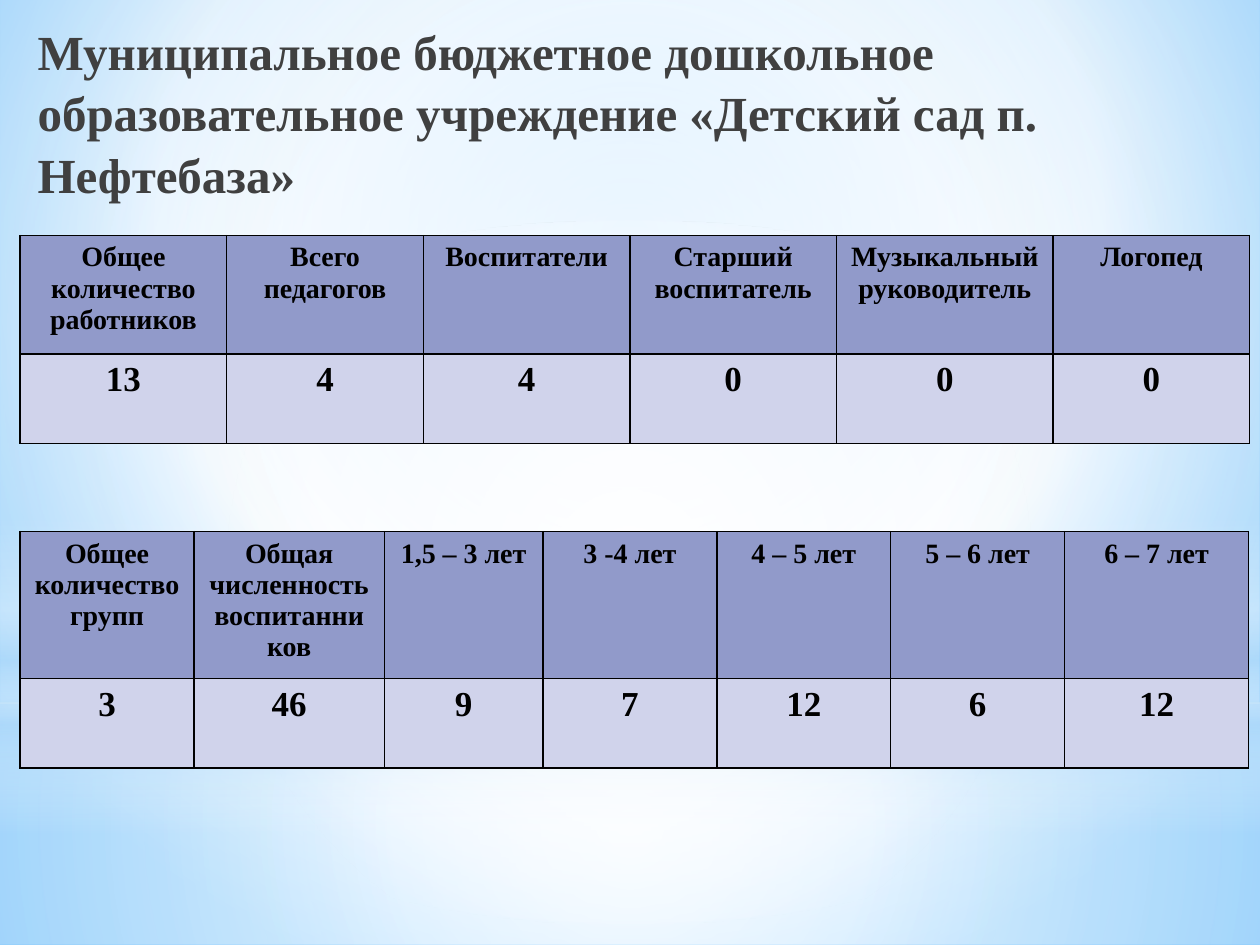
from dataclasses import dataclass

from pptx import Presentation
from pptx.dml.color import RGBColor
from pptx.enum.shapes import MSO_SHAPE as Shp
from pptx.enum.text import MSO_ANCHOR, PP_ALIGN
from pptx.oxml import parse_xml
from pptx.oxml.ns import nsdecls, qn
from pptx.util import Inches, Pt

BLACK = RGBColor(0x00, 0x00, 0x00)
TITLE_GREY = RGBColor(0x40, 0x40, 0x40)
HEADER_FILL = RGBColor(0x91, 0x9A, 0xCA)
VALUE_FILL = RGBColor(0xD0, 0xD3, 0xEB)
WHITE = RGBColor(0xFF, 0xFF, 0xFF)
PALE_BLUE = RGBColor(0xB4, 0xDC, 0xFA)
SKY = RGBColor(0x9E, 0xD5, 0xFF)
DEEP_SKY = RGBColor(0x5B, 0xB9, 0xFF)
FONT = "Times New Roman"
CENTRE = (50, 50, 50, 50)


@dataclass
class Gradient:
    stops: list  # (position %, colour, opacity %)
    focus: tuple | None = None  # left, top, right, bottom in %; None is vertical


@dataclass
class Glow:
    shape: Shp
    top: float
    height: float
    gradient: Gradient


@dataclass
class StaffTable:
    top: float
    widths: list
    heights: list
    header: list
    values: list


BACKGROUND = Gradient([(0, SKY, 100), (60, WHITE, 100), (100, DEEP_SKY, 100)],
                      (20, 10, 20, 60))
GLOWS = [
    Glow(Shp.RECTANGLE, 5.58, 1.92, Gradient(
        [(0, WHITE, 91), (37, WHITE, 76), (100, PALE_BLUE, 79)], CENTRE)),
    Glow(Shp.RECTANGLE, 0, 5.58, Gradient(
        [(0, WHITE, 89), (48, WHITE, 62), (100, PALE_BLUE, 79)], CENTRE)),
    Glow(Shp.RECTANGLE, 4.12, 2.5, Gradient(
        [(0, WHITE, 0), (29, WHITE, 30), (45, PALE_BLUE, 40),
         (55, WHITE, 26), (65, PALE_BLUE, 60), (100, WHITE, 0)])),
    Glow(Shp.OVAL, 1.75, 5.58, Gradient(
        [(0, WHITE, 100), (56, WHITE, 0)], CENTRE)),
]
TABLES = [
    StaffTable(1.87, [1.64, 1.56, 1.64, 1.64, 1.72, 1.56], [0.94, 0.71],
               ["Общее количество работников", "Всего педагогов", "Воспитатели",
                "Старший воспитатель", "Музыкальный руководитель", "Логопед"],
               ["13", "4", "4", "0", "0", "0"]),
    StaffTable(4.22, [1.38, 1.51, 1.26, 1.38, 1.38, 1.38, 1.46], [1.09, 0.71],
               ["Общее количество групп", "Общая численность воспитанников",
                "1,5 – 3 лет", "3 -4 лет", "4 – 5 лет", "5 – 6 лет", "6 – 7 лет"],
               ["3", "46", "9", "7", "12", "6", "12"]),
]


def set_gradient(fill, element, gradient: Gradient) -> None:
    """Swap a solid fill inside the element for the gradient."""
    fill.solid()
    solid = next(element.iter(qn("a:solidFill")))
    stops = "".join(
        f'<a:gs pos="{pos * 1000}"><a:srgbClr val="{colour}">'
        f'<a:alpha val="{opacity * 1000}"/></a:srgbClr></a:gs>'
        for pos, colour, opacity in gradient.stops)
    if gradient.focus:
        sides = " ".join(f'{side}="{v * 1000}"'
                         for side, v in zip("ltrb", gradient.focus))
        kind = f'<a:path path="circle"><a:fillToRect {sides}/></a:path>'
    else:
        kind = '<a:lin ang="5400000" scaled="0"/>'
    solid.getparent().replace(solid, parse_xml(
        f'<a:gradFill {nsdecls("a")} rotWithShape="1">'
        f'<a:gsLst>{stops}</a:gsLst>{kind}</a:gradFill>'))


def add_glow(s, glow: Glow) -> None:
    sp = s.shapes.add_shape(glow.shape, 0, Inches(glow.top),
                            Inches(10), Inches(glow.height))
    sp.shadow.inherit = False
    sp.line.fill.background()
    set_gradient(sp.fill, sp.element.spPr, glow.gradient)


def add_text(p, text: str, size: float, colour: RGBColor) -> None:
    r = p.add_run()
    r.text = text
    for name, value in {"name": FONT, "size": Pt(size), "bold": True}.items():
        setattr(r.font, name, value)
    r.font.color.rgb = colour


def add_borders(cell) -> None:
    tc_pr = cell._tc.get_or_add_tcPr()
    for i, side in enumerate("LRTB"):
        tc_pr.insert(i, parse_xml(
            f'<a:ln{side} {nsdecls("a")} w="{Pt(1)}"><a:solidFill>'
            f'<a:srgbClr val="{BLACK}"/></a:solidFill></a:ln{side}>'))


def add_staff_table(s, spec: StaffTable) -> None:
    table = s.shapes.add_table(
        2, len(spec.widths), Inches(0.16), Inches(spec.top),
        Inches(sum(spec.widths)), Inches(sum(spec.heights))).table
    for column, width in zip(table.columns, spec.widths):
        column.width = Inches(width)
    rows = [(spec.header, 16, HEADER_FILL), (spec.values, 20, VALUE_FILL)]
    for i, (texts, size, colour) in enumerate(rows):
        table.rows[i].height = Inches(spec.heights[i])
        for j, text in enumerate(texts):
            cell = table.cell(i, j)
            cell.fill.solid()
            cell.fill.fore_color.rgb = colour
            add_borders(cell)
            p = cell.text_frame.paragraphs[0]
            p.alignment = PP_ALIGN.CENTER
            add_text(p, text, size, BLACK)


def main() -> None:
    prs = Presentation()
    prs.slide_width, prs.slide_height = Inches(10), Inches(7.5)
    s = prs.slides.add_slide(prs.slide_layouts[6])

    # Sky background with soft glows
    set_gradient(s.background.fill, s.element, BACKGROUND)
    for glow in GLOWS:
        add_glow(s, glow)

    # Title
    tf = s.shapes.add_textbox(Inches(0.2), Inches(0.13),
                              Inches(9.29), Inches(1.5)).text_frame
    tf.word_wrap = True
    tf.vertical_anchor = MSO_ANCHOR.MIDDLE
    p = tf.paragraphs[0]
    p.line_spacing = 1.05
    add_text(p, "Муниципальное бюджетное дошкольное образовательное "
                "учреждение «Детский сад п. Нефтебаза»", 28, TITLE_GREY)

    # Staff and age group tables
    for spec in TABLES:
        add_staff_table(s, spec)

    prs.save("out.pptx")


if __name__ == "__main__":
    main()
